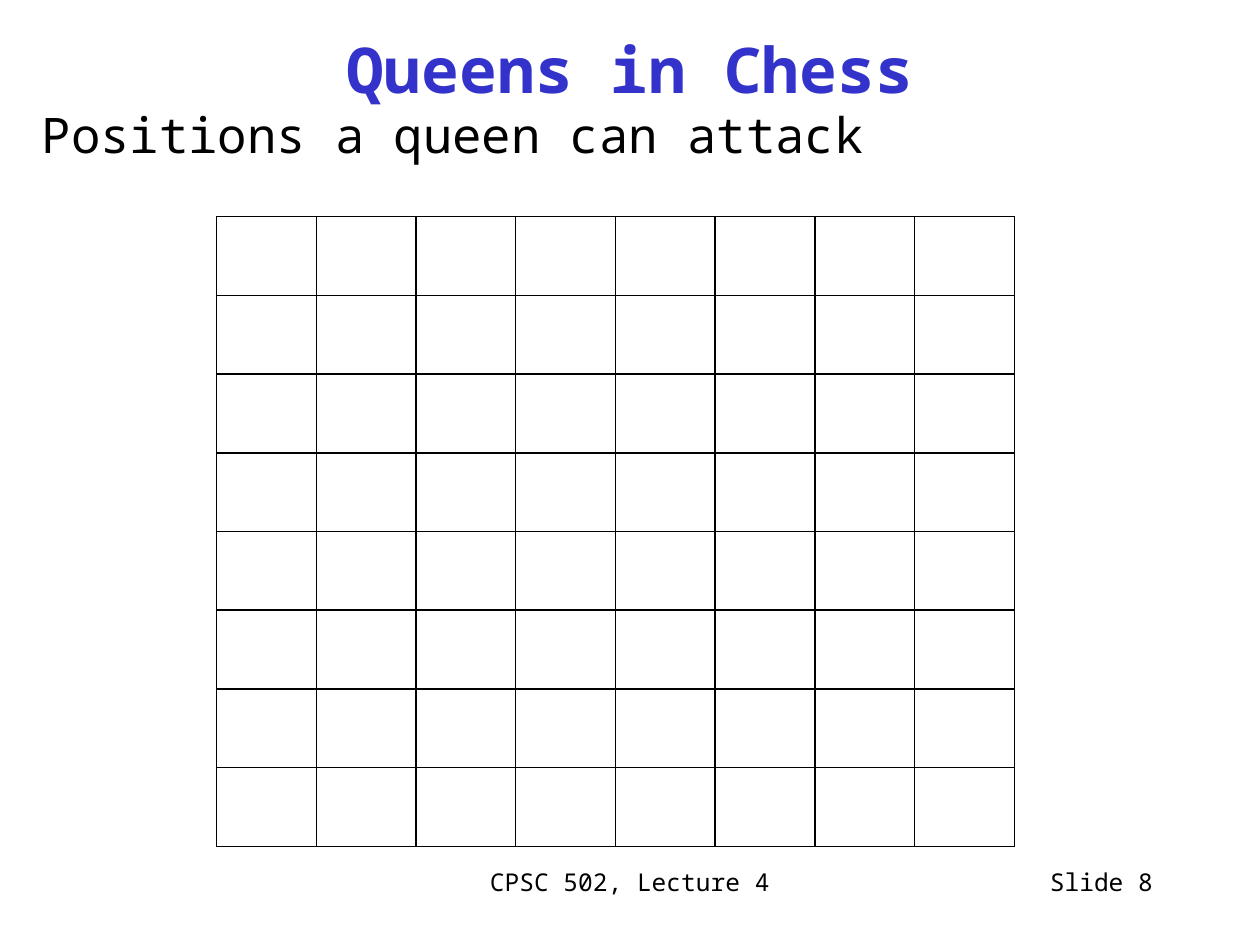
from lxml.etree import SubElement
from pptx import Presentation
from pptx.dml.color import RGBColor
from pptx.enum.text import MSO_ANCHOR, PP_ALIGN
from pptx.oxml.ns import qn
from pptx.util import Pt

BLACK = RGBColor(0x00, 0x00, 0x00)
WHITE = RGBColor(0xFF, 0xFF, 0xFF)
BLUE = RGBColor(0x33, 0x33, 0xCC)
FONT = "Noto Sans Mono"
BOARD_SIZE = 8


def add_text(slide, box, text, size=14, color=BLACK, bold=False,
             align=PP_ALIGN.LEFT, anchor=MSO_ANCHOR.TOP):
    """Place one formatted line of text in the given box."""
    shape = slide.shapes.add_textbox(*map(Pt, box))
    frame = shape.text_frame
    frame.word_wrap = True
    frame.vertical_anchor = anchor
    paragraph = frame.paragraphs[0]
    paragraph.alignment = align
    run = paragraph.add_run()
    run.text = text
    run.font.name = FONT
    run.font.size = Pt(size)
    run.font.bold = bold
    run.font.color.rgb = color


def style_square(cell):
    """Give a board square a white fill and thin black borders."""
    properties = cell._tc.get_or_add_tcPr()
    for side in ("a:lnL", "a:lnR", "a:lnT", "a:lnB"):
        line = SubElement(properties, qn(side), w=str(Pt(1)))
        fill = SubElement(line, qn("a:solidFill"))
        SubElement(fill, qn("a:srgbClr"), val=str(BLACK))
    cell.fill.solid()
    cell.fill.fore_color.rgb = WHITE


def add_board(slide, box):
    """Draw the empty chessboard as a table filling the box."""
    left, top, width, height = box
    frame = slide.shapes.add_table(BOARD_SIZE, BOARD_SIZE, *map(Pt, box))
    table = frame.table
    table.first_row = False
    table.horz_banding = False
    for column in table.columns:
        column.width = Pt(width / BOARD_SIZE)
    for row in table.rows:
        row.height = Pt(height / BOARD_SIZE)
    for cell in table.iter_cells():
        style_square(cell)


def add_heading(slide, box):
    """Place the title and the line beneath it."""
    left, top, width, height = box
    add_text(slide, (left + 7, top, width, 54), "Queens in Chess", size=36,
             color=BLUE, bold=True, align=PP_ALIGN.CENTER,
             anchor=MSO_ANCHOR.MIDDLE)
    add_text(slide, (left, top + 44, width - 6, height - 44),
             "Positions a queen can attack", size=28)


def add_footer(slide, box):
    """Place the lecture name and slide number."""
    left, top, width, height = box
    add_text(slide, (left, top, 228, height), "CPSC 502, Lecture 4",
             align=PP_ALIGN.CENTER)
    add_text(slide, (left + width - 150, top, 150, height), "Slide 8",
             align=PP_ALIGN.RIGHT)


def main():
    """Build and save the slide."""
    presentation = Presentation()
    presentation.slide_width = Pt(720)
    presentation.slide_height = Pt(540)
    slide = presentation.slides.add_slide(presentation.slide_layouts[6])
    add_footer(slide, (246, 492, 420, 36))
    add_heading(slide, (16.75, 12, 672, 144))
    add_board(slide, (123.75, 123.75, 456, 360))
    presentation.save("out.pptx")


if __name__ == "__main__":
    main()
